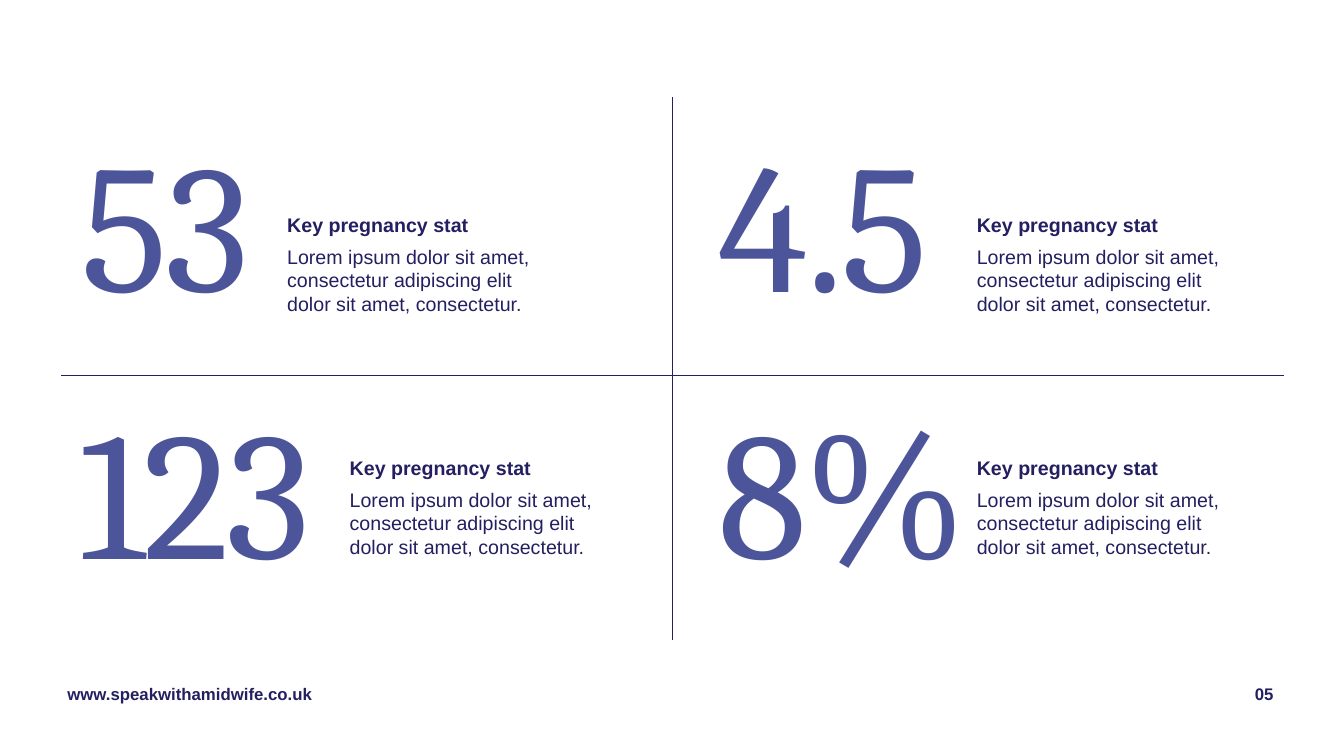
from copy import deepcopy
from dataclasses import dataclass

from pptx import Presentation
from pptx.dml.color import RGBColor
from pptx.enum import shapes, text
from pptx.oxml import ns, xmlchemy
from pptx.util import Inches, Pt

NAVY = "231F60"
INDIGO = "4D559A"
BODY = ("Lorem ipsum dolor sit amet, \vconsectetur adipiscing elit \v"
        "dolor sit amet, consectetur.")


@dataclass
class TextLine:
    words: str
    size: float
    bold: bool = False
    font: str = "Arial"
    color: str = NAVY
    tracking: int = 0  # hundredths of a point


@dataclass
class Stat:
    figure: str
    figure_left: float
    figure_width: float
    caption_left: float
    row: int


STATS = [
    Stat("53", 0.71, 2.41, 2.75, 0),
    Stat("123", 0.69, 3.06, 3.37, 1),
    Stat("4.5", 7.03, 2.94, 9.59, 0),
    Stat("8%", 7.03, 4.22, 9.59, 1),
]
FIGURE_TOPS = (1.29, 3.94)
CAPTION_TOPS = (2.06, 4.47)


def set_color(color_format, color: str) -> None:
    color_format.rgb = RGBColor.from_string(color)


def write_line(paragraph, line: TextLine, paragraph_format: dict) -> None:
    for name, value in paragraph_format.items():
        setattr(paragraph, name, value)
    paragraph.text = line.words
    font_format = {"size": Pt(line.size), "bold": line.bold, "name": line.font}
    for run in paragraph.runs:
        for name, value in font_format.items():
            setattr(run.font, name, value)
        set_color(run.font.color, line.color)
        if line.tracking:
            run.font._element.set("spc", str(line.tracking))
    # Line breaks need the run format too, or they stretch the line height.
    for line_break in paragraph._p.findall(ns.qn("a:br")):
        line_break.insert(0, deepcopy(paragraph.runs[0].font._element))


def add_text(slide, left: float, top: float, width: float, height: float,
             lines: list[TextLine], wrap: bool = True, **paragraph_format) -> None:
    """Add a text box with 6 pt between its paragraphs."""
    box = slide.shapes.add_textbox(
        Inches(left), Inches(top), Inches(width), Inches(height))
    frame = box.text_frame
    frame.word_wrap = wrap
    frame.auto_size = text.MSO_AUTO_SIZE.SHAPE_TO_FIT_TEXT
    for index, line in enumerate(lines):
        paragraph = frame.add_paragraph() if index else frame.paragraphs[0]
        spacing = {"space_before": Pt(6)} if index else {}
        write_line(paragraph, line, paragraph_format | spacing)


def add_rule(slide, left: float, top: float, right: float, bottom: float) -> None:
    rule = slide.shapes.add_connector(
        shapes.MSO_CONNECTOR.STRAIGHT,
        Inches(left), Inches(top), Inches(right), Inches(bottom))
    set_color(rule.line.color, NAVY)
    rule.line.width = Pt(0.5)
    rule._element.spPr.append(xmlchemy.OxmlElement("a:effectLst"))


def add_figure(slide, stat: Stat) -> None:
    figure = TextLine(stat.figure, 130, font="Cambria", color=INDIGO, tracking=-150)
    add_text(slide, stat.figure_left, FIGURE_TOPS[stat.row],
             stat.figure_width, 2.07, [figure], line_spacing=0.9)


def add_caption(slide, stat: Stat) -> None:
    lines = [TextLine("Key pregnancy stat", 14, bold=True), TextLine(BODY, 14)]
    add_text(slide, stat.caption_left, CAPTION_TOPS[stat.row],
             2.67, 1.13, lines, wrap=False)


def main() -> None:
    presentation = Presentation()
    presentation.slide_width = Inches(13.33)
    presentation.slide_height = Inches(7.5)
    slide = presentation.slides.add_slide(presentation.slide_layouts[6])

    add_text(slide, 0.57, 6.73, 2.66, 0.3,
             [TextLine("www.speakwithamidwife.co.uk", 12, bold=True)], wrap=False)
    add_text(slide, 11.25, 6.73, 1.48, 0.3, [TextLine("05", 12, bold=True)],
             alignment=text.PP_ALIGN.RIGHT)
    add_rule(slide, 0.61, 3.72, 12.73, 3.72)
    add_rule(slide, 6.67, 0.96, 6.67, 6.35)
    for stat in STATS:
        add_figure(slide, stat)
    for stat in STATS:
        add_caption(slide, stat)

    presentation.save("out.pptx")


if __name__ == "__main__":
    main()
